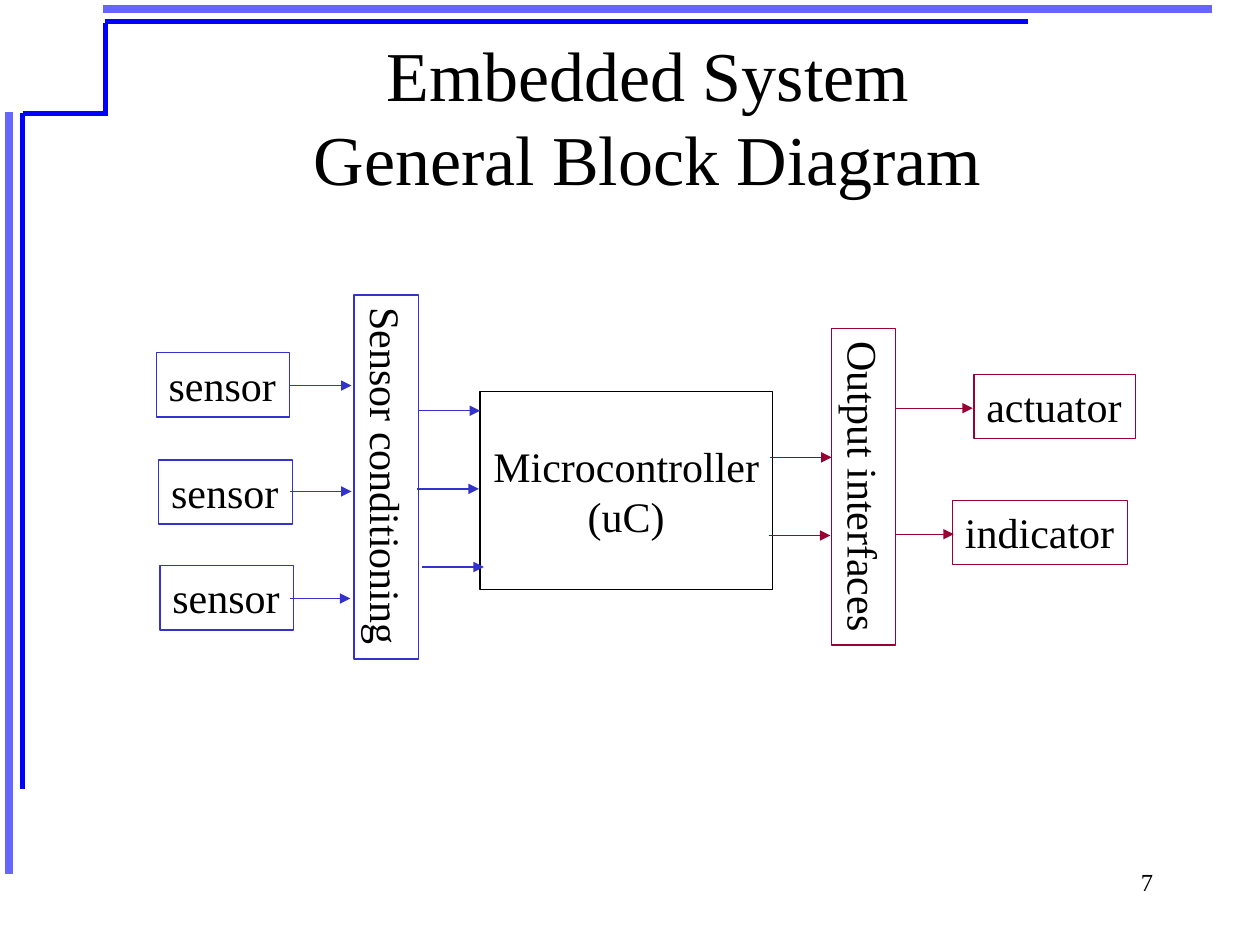
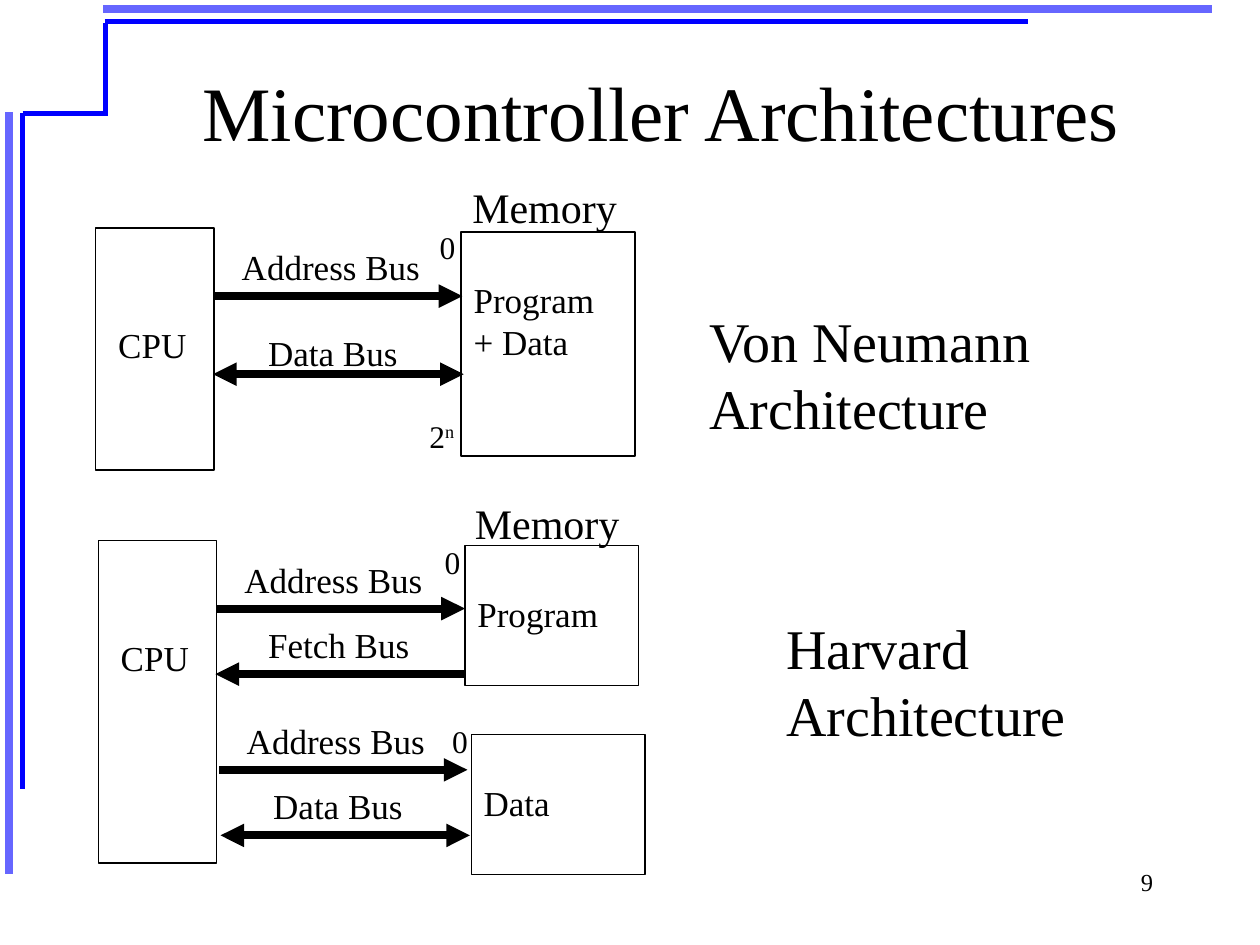
from pptx import Presentation
from pptx import util as u
from pptx.dml.color import RGBColor
from pptx.enum import shapes, text
from pptx.oxml.ns import qn
from lxml import etree

COLOURS = {
    "ink": "000000",
    "frame_light": "6666FF",
    "frame_dark": "0000FF",
    "input": "3333CC",
    "output": "990033",
}
FONT = "Times New Roman"
FRAME = [
    ("frame_light", 4.5, (0.07, 0.89), (0.07, 6.94)),
    ("frame_light", 4.5, (0.82, 0.07), (9.62, 0.07)),
    ("frame_dark", 3, (0.18, 0.9), (0.18, 6.26)),
    ("frame_dark", 3, (0.83, 0.17), (8.16, 0.17)),
    ("frame_dark", 3, (0.18, 0.9), (0.85, 0.9)),
    ("frame_dark", 3, (0.84, 0.92), (0.84, 0.18)),
]


def colour(name):
    return RGBColor.from_string(COLOURS[name])


class Deck:
    def __init__(self):
        self.presentation = Presentation()
        self.presentation.slide_width = u.Inches(10)
        self.presentation.slide_height = u.Inches(7.5)
        self.slide = None

    def add_slide(self, title, left, top, size, number):
        layout = self.presentation.slide_layouts[5]
        self.slide = self.presentation.slides.add_slide(layout)
        for name, width, start, end in FRAME:
            self.line(start, end, name, width)
        heading = self.slide.shapes.title
        heading.left, heading.top = u.Inches(left), u.Inches(top)
        heading.width, heading.height = u.Inches(8.5), u.Inches(1.25)
        self.set_text(heading, title, size, align="CENTER", anchor="MIDDLE", wrap=True)
        self.label(str(number), 7.17, 6.83, 2.08, 0.5, 14, align="RIGHT")

    def set_text(self, shape, words, size, align="LEFT", anchor="TOP", wrap=False):
        frame = shape.text_frame
        frame.text = words
        frame.word_wrap = wrap
        frame.auto_size = text.MSO_AUTO_SIZE.NONE
        frame.vertical_anchor = text.MSO_ANCHOR[anchor]
        for paragraph in frame.paragraphs:
            paragraph.alignment = text.PP_ALIGN[align]
            paragraph.font.name = FONT
            paragraph.font.size = u.Pt(size)
            paragraph.font.color.rgb = colour("ink")

    def label(self, words, left, top, width, height, size, align="LEFT"):
        box = self.slide.shapes.add_textbox(*map(u.Inches, (left, top, width, height)))
        self.set_text(box, words, size, align, wrap=align == "RIGHT")
        return box

    def box(self, left, top, width, height, outline="ink"):
        shape = self.slide.shapes.add_shape(
            shapes.MSO_SHAPE.RECTANGLE, *map(u.Inches, (left, top, width, height)))
        shape.shadow.inherit = False
        shape.fill.background()
        shape.line.color.rgb = colour(outline)
        shape.line.width = u.Pt(0.75)
        return shape

    def block(self, words, left, top, width, outline, rotation=0):
        shape = self.box(left, top, width, 0.51, outline)
        shape.rotation = rotation
        self.set_text(shape, words, 24)

    def memory(self, words, left, top, height):
        shape = self.box(left, top, 1.38, height)
        self.set_text(shape, words, 20, wrap=True)
        shape.text_frame.margin_top = u.Inches(0.37)

    def line(self, start, end, name="ink", width=0.75, arrows=()):
        connector = self.slide.shapes.add_connector(
            shapes.MSO_CONNECTOR.STRAIGHT, *map(u.Inches, (*start, *end)))
        connector.line.color.rgb = colour(name)
        connector.line.width = u.Pt(width)
        properties = connector._element.spPr
        for arrow in arrows:
            etree.SubElement(properties.find(qn("a:ln")), qn(f"a:{arrow}"), type="triangle")
        etree.SubElement(properties, qn("a:effectLst"))

    def bus(self, words, label_at, label_width, start, end_x, arrows):
        self.line(start, (end_x, start[1]), width=4.5, arrows=arrows)
        self.label(words, *label_at, label_width, 0.43, 20)

    def cpu(self, left, top, height):
        self.box(left, top, 0.94, height)
        self.label("CPU", left + 0.08, top + 0.71, 0.74, 0.43, 20)


def block_diagram(deck):
    deck.add_slide("Embedded System\vGeneral Block Diagram", 0.89, 0.29, 40, 7)
    controller = deck.box(3.81, 3.11, 2.32, 1.57)
    deck.set_text(controller, "Microcontroller\n(uC)", 24, "CENTER", "MIDDLE")
    for left, top in ((1.24, 2.8), (1.26, 3.65), (1.27, 4.49)):
        deck.block("sensor", left, top, 1.06, "input")
    deck.block("Sensor conditioning", 1.62, 3.53, 2.89, "input", 90)
    deck.block("Output interfaces", 5.6, 3.61, 2.51, "output", 90)
    deck.block("actuator", 7.73, 2.97, 1.28, "output")
    deck.block("indicator", 7.56, 3.97, 1.39, "output")
    signals = {
        "input": [(2.3, 2.79, 3.06), (2.3, 2.79, 3.9), (2.3, 2.78, 4.75),
                  (3.32, 3.81, 3.26), (3.31, 3.8, 3.88), (3.35, 3.84, 4.5)],
        "output": [(6.11, 6.6, 3.63), (6.1, 6.59, 4.25),
                   (7.11, 7.72, 3.24), (7.11, 7.57, 4.24)],
    }
    for name, arrows in signals.items():
        for start, end, y in arrows:
            deck.line((start, y), (end, y), name, arrows=["tailEnd"])


def architectures(deck):
    deck.add_slide("Microcontroller Architectures", 1, 0.25, 44, 9)
    deck.cpu(0.76, 1.81, 1.92)
    deck.cpu(0.78, 4.29, 2.56)
    deck.memory("Program + Data", 3.66, 1.84, 1.78)
    deck.memory("Program", 3.69, 4.33, 1.11)
    deck.memory("Data", 3.74, 5.83, 1.11)

    for left, y in ((1.7, 2.35), (1.72, 4.83), (1.74, 6.11)):
        deck.bus("Address Bus", (left + 0.12, y - 0.45), 1.61, (left, y), left + 1.97, ["tailEnd"])
    both_ways = ["headEnd", "tailEnd"]
    deck.bus("Data Bus", (2.03, 2.58), 1.23, (1.69, 2.97), 3.68, both_ways)
    deck.bus("Data Bus", (2.07, 6.18), 1.23, (1.75, 6.63), 3.73, both_ways)
    deck.bus("Fetch Bus", (2.03, 4.9), 1.32, (1.71, 5.35), 3.69, ["headEnd"])

    for left, top in ((3.65, 1.39), (3.67, 3.9)):
        deck.label("Memory", left, top, 1.35, 0.5, 24)
    for left, top in ((3.39, 1.76), (3.43, 4.26), (3.49, 5.68)):
        deck.label("0", left, top, 0.33, 0.4, 18)
    last_address = deck.label("2", 3.31, 3.26, 0.41, 0.4, 18)
    exponent = last_address.text_frame.paragraphs[0].add_run()
    exponent.text = "n"
    exponent.font._element.set("baseline", "30000")

    deck.label("Von Neumann\nArchitecture", 5.53, 2.38, 2.81, 1.17, 32)
    deck.label("Harvard\nArchitecture", 6.14, 4.82, 2.42, 1.17, 32)


def main():
    deck = Deck()
    block_diagram(deck)
    architectures(deck)
    deck.presentation.save("out.pptx")


if __name__ == "__main__":
    main()
